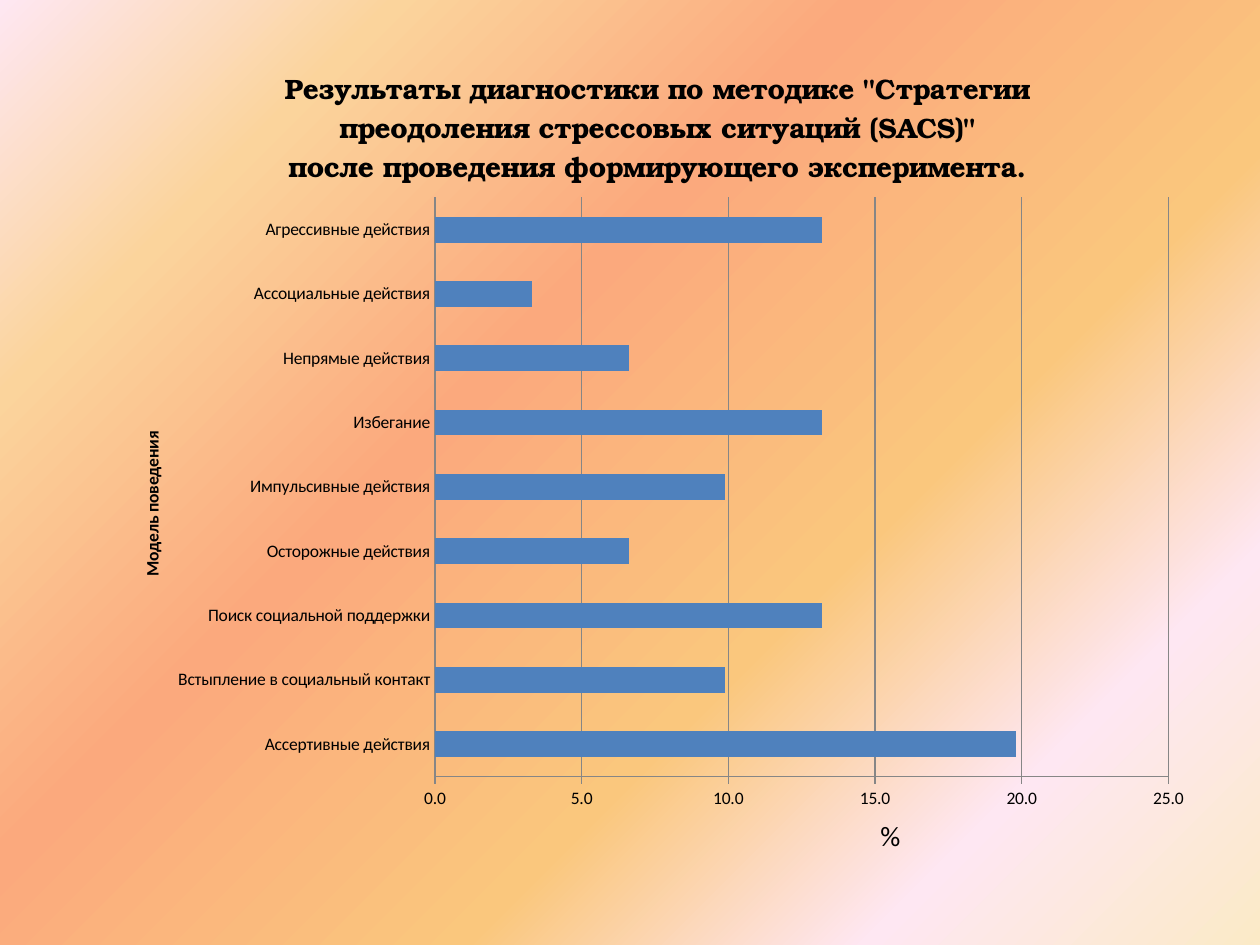
from pptx import Presentation
from pptx.chart.data import CategoryChartData
from pptx.dml.color import RGBColor
from pptx.enum.chart import XL_CHART_TYPE as ChartType, XL_TICK_MARK as TickMark
from pptx.oxml import parse_xml
from pptx.oxml.ns import nsdecls, qn
from pptx.util import Inches, Pt

WIDTH, HEIGHT = 10, 7.5
BODY_FONT, TITLE_FONT = "Calibri", "TeX Gyre Bonum"
BLACK, GREY, BLUE = "000000", "868686", "4F81BD"
BACKGROUND_STOPS = [(0, "FBEAC7"), (18, "FEE7F2"), (36, "FAC77D"),
                    (61, "FBA97D"), (82, "FBD49C"), (100, "FEE7F2")]
TITLE = ['Результаты диагностики по методике "Стратегии преодоления стрессовых ситуаций (SACS)"',
         "после проведения формирующего эксперимента."]
RESULTS = {
    "Ассертивные действия": 19.8,
    "Встыпление в социальный контакт": 9.9,
    "Поиск социальной поддержки": 13.2,
    "Осторожные действия": 6.6,
    "Импульсивные действия": 9.9,
    "Избегание": 13.2,
    "Непрямые действия": 6.6,
    "Ассоциальные действия": 3.3,
    "Агрессивные действия": 13.2,
}


def color(hex_code):
    return RGBColor.from_string(hex_code)


def set_background(slide):
    """Fill the slide with a gradient spreading from its lower right corner."""
    fill = slide.background.fill
    fill.gradient()
    stops = "".join(f'<a:gs pos="{position * 1000}"><a:srgbClr val="{code}"/></a:gs>'
                    for position, code in BACKGROUND_STOPS)
    gradient = parse_xml(
        f'<a:gradFill {nsdecls("a")} rotWithShape="1"><a:gsLst>{stops}</a:gsLst>'
        '<a:path path="circle"><a:fillToRect l="100000" t="100000"/></a:path></a:gradFill>')
    old = next(slide.background._cSld.iter(qn("a:gradFill")))
    old.getparent().replace(old, gradient)


def set_layout(element, index, **shares):
    """Place a chart part by shares of the chart's size."""
    for old in element.findall(qn("c:layout")):
        element.remove(old)
    target = '<c:layoutTarget val="inner"/>' if "w" in shares else ""
    modes = "".join(f'<c:{key}Mode val="edge"/>' for key in ("x", "y"))
    values = "".join(f'<c:{key} val="{value}"/>' for key, value in shares.items())
    element.insert(index, parse_xml(
        f'<c:layout {nsdecls("c")}><c:manualLayout>{target}{modes}{values}'
        '</c:manualLayout></c:layout>'))


def write_title(title, lines, size, font_name, bold, x, y, rotation=0):
    frame = title.text_frame
    frame.text = "\n".join(lines)
    frame._txBody.bodyPr.set("rot", str(rotation * 60000))
    for paragraph in frame.paragraphs:
        font = paragraph.font
        font.size, font.name, font.bold = Pt(size), font_name, bold
        font.color.rgb = color(BLACK)
    set_layout(title._element, 1, x=x, y=y)


def draw_line(line):
    line.color.rgb = color(GREY)
    line.width = Pt(0.75)


def style_axes(chart):
    categories, values = chart.category_axis, chart.value_axis
    categories.major_tick_mark = TickMark.NONE
    values.major_tick_mark = TickMark.CROSS
    values.minimum_scale, values.maximum_scale, values.major_unit = 0, 25, 5
    values.has_major_gridlines = True
    values.tick_labels.number_format = "0.0"
    values.tick_labels.number_format_is_linked = False
    for line in (categories.format.line, values.format.line, values.major_gridlines.format.line):
        draw_line(line)
    write_title(categories.axis_title, ["Модель поведения"], 10, BODY_FONT, True,
                x=0.03, y=0.46, rotation=-90)
    write_title(values.axis_title, ["%"], 16, BODY_FONT, False, x=0.7, y=0.9)


def add_results_chart(slide):
    data = CategoryChartData(number_format="0.0")
    data.categories = list(RESULTS)
    data.add_series("Series 1", list(RESULTS.values()))
    chart = slide.shapes.add_chart(ChartType.BAR_CLUSTERED, Inches(0.83), Inches(0.21),
                                   Inches(8.74), Inches(6.93), data).chart
    chart.has_legend = False
    chart.font.size, chart.font.name = Pt(10), BODY_FONT
    chart.font.color.rgb = color(BLACK)
    plot = chart.plots[0]
    plot.gap_width, plot.vary_by_categories = 150, False
    fill = plot.series[0].format.fill
    fill.solid()
    fill.fore_color.rgb = color(BLUE)
    style_axes(chart)
    write_title(chart.chart_title, TITLE, 16, TITLE_FONT, True, x=0.16, y=0.04)
    set_layout(chart._chartSpace.chart.plotArea, 0, x=0.3, y=0.196, w=0.666, h=0.663)


def main():
    presentation = Presentation()
    presentation.slide_width, presentation.slide_height = Inches(WIDTH), Inches(HEIGHT)
    slide = presentation.slides.add_slide(presentation.slide_layouts[6])
    set_background(slide)
    add_results_chart(slide)
    presentation.save("out.pptx")


if __name__ == "__main__":
    main()
